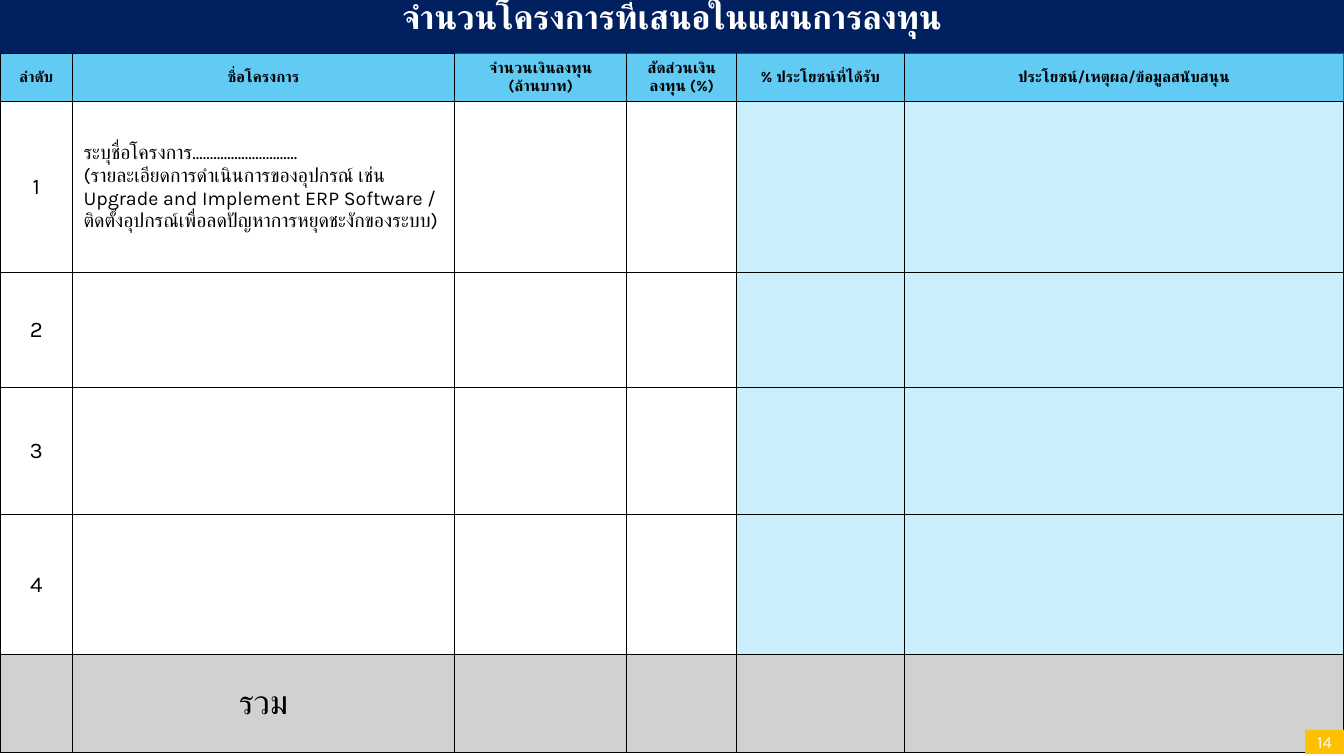
from dataclasses import dataclass

import lxml.etree
import pptx
import pptx.dml.color
import pptx.enum.shapes
import pptx.enum.text
import pptx.oxml.ns
import pptx.util

COLORS = {
    "black": "000000",
    "white": "FFFFFF",
    "navy": "002060",
    "edge": "007BC0",
    "heading": "61CBF4",
    "benefit": "CAEEFB",
    "total": "D1D1D1",
    "badge": "FFC000",
}
FONT = "Karla"
TABLE_TOP = 38.2
HEADING_HEIGHT = 33.8
CENTER = pptx.enum.text.PP_ALIGN.CENTER
LEFT = pptx.enum.text.PP_ALIGN.LEFT
TOP = pptx.enum.text.MSO_ANCHOR.TOP
MIDDLE = pptx.enum.text.MSO_ANCHOR.MIDDLE


@dataclass
class Text:
    paragraphs: list[list[str]]
    size: float
    bold: bool = False
    color: str = "black"
    align: pptx.enum.text.PP_ALIGN = CENTER
    spacing: float = 1.0


@dataclass
class Column:
    width: float
    heading: list[str]
    fill: str = "white"
    top_edge: str = "edge"
    right_edge: str = "black"


@dataclass
class Row:
    height: float
    texts: dict[int, Text]
    fill: str | None = None


@dataclass
class Bar:
    left: float
    top: float
    width: float
    height: float
    fill: str
    text: Text
    inset: float
    anchor: pptx.enum.text.MSO_ANCHOR
    wrap: bool


COLUMNS = [
    Column(51.8, ["ลำดับ"], top_edge="black"),
    Column(272.9, ["ชื่อโครงการ"], top_edge="black"),
    Column(123.1, ["จำนวนเงินลงทุน", "(ล้านบาท)"]),
    Column(78.5, ["สัดส่วนเงินลงทุน (%)"]),
    Column(119.5, ["% ประโยชน์ที่ได้รับ"], "benefit"),
    Column(314.2, ["ประโยชน์/เหตุผล/ข้อมูลสนับสนุน"], "benefit", right_edge="edge"),
]
PROJECT = Text(
    [[
        "ระบุชื่อโครงการ..............................",
        "(รายละเอียดการดำเนินการของอุปกรณ์ เช่น Upgrade and Implement ERP Software / "
        "ติดตั้งอุปกรณ์เพื่อลดปัญหาการหยุดชะงักของระบบ)",
    ]],
    14,
    align=LEFT,
)
ROWS = [
    Row(height, {0: Text([[str(number)]], 16)})
    for number, height in enumerate([122.4, 82.1, 90.7, 100.1], 1)
]
ROWS[0].texts[1] = PROJECT
ROWS.append(Row(69.8, {1: Text([["รวม"]], 24)}, "total"))
BARS = [
    Bar(0, 0, 960, 38.2, "navy",
        Text([["จำนวนโครงการที่เสนอในแผนการลงทุน"]], 24, True, "white", spacing=0.9),
        0, TOP, True),
    Bar(932.2, 521.3, 27.8, 17.3, "badge",
        Text([["14"]], 12, color="white"), 7.2, MIDDLE, False),
]


def rgb(name: str) -> pptx.dml.color.RGBColor:
    return pptx.dml.color.RGBColor.from_string(COLORS[name])


def write_text(frame: pptx.text.text.TextFrame, text: Text) -> None:
    for index, lines in enumerate(text.paragraphs):
        paragraph = frame.paragraphs[0] if index == 0 else frame.add_paragraph()
        paragraph.alignment = text.align
        paragraph.line_spacing = text.spacing
        for line_index, line in enumerate(lines):
            if line_index:
                paragraph.add_line_break()
            run = paragraph.add_run()
            run.text = line
            run.font.name = FONT
            run.font.size = pptx.util.Pt(text.size)
            run.font.bold = text.bold
            run.font.color.rgb = rgb(text.color)
            complex_font = lxml.etree.SubElement(
                run.font._element, pptx.oxml.ns.qn("a:cs"))
            complex_font.set("typeface", FONT)


def style_cell(cell: pptx.table._Cell, fill: str, top: str = "black",
               right: str = "black") -> None:
    cell.margin_left = cell.margin_right = pptx.util.Pt(7.9)
    cell.margin_top = cell.margin_bottom = pptx.util.Pt(4.3)
    cell.vertical_anchor = MIDDLE
    properties = cell._tc.get_or_add_tcPr()
    for side, color in {"L": "black", "R": right, "T": top, "B": "black"}.items():
        line = lxml.etree.SubElement(properties, pptx.oxml.ns.qn(f"a:ln{side}"))
        line.set("w", str(pptx.util.Pt(0.75)))
        solid = lxml.etree.SubElement(line, pptx.oxml.ns.qn("a:solidFill"))
        lxml.etree.SubElement(
            solid, pptx.oxml.ns.qn("a:srgbClr")).set("val", COLORS[color])
    cell.fill.solid()
    cell.fill.fore_color.rgb = rgb(fill)


def add_project_table(slide: pptx.slide.Slide) -> None:
    heights = [HEADING_HEIGHT] + [row.height for row in ROWS]
    table = slide.shapes.add_table(
        len(heights), len(COLUMNS), 0, pptx.util.Pt(TABLE_TOP),
        pptx.util.Pt(sum(column.width for column in COLUMNS)),
        pptx.util.Pt(sum(heights))).table
    table.first_row = table.horz_banding = False
    for table_row, height in zip(table.rows, heights):
        table_row.height = pptx.util.Pt(height)
    for index, column in enumerate(COLUMNS):
        table.columns[index].width = pptx.util.Pt(column.width)
        heading = table.cell(0, index)
        style_cell(heading, "heading", column.top_edge, column.right_edge)
        write_text(heading.text_frame,
                   Text([[line] for line in column.heading], 11, True))
        for row_index, row in enumerate(ROWS, 1):
            cell = table.cell(row_index, index)
            style_cell(cell, row.fill or column.fill)
            if index in row.texts:
                write_text(cell.text_frame, row.texts[index])


def add_bar(slide: pptx.slide.Slide, bar: Bar) -> None:
    shape = slide.shapes.add_shape(
        pptx.enum.shapes.MSO_SHAPE.RECTANGLE,
        pptx.util.Pt(bar.left), pptx.util.Pt(bar.top),
        pptx.util.Pt(bar.width), pptx.util.Pt(bar.height))
    shape.shadow.inherit = False
    shape.fill.solid()
    shape.fill.fore_color.rgb = rgb(bar.fill)
    shape.line.fill.background()
    frame = shape.text_frame
    frame.margin_left = frame.margin_right = pptx.util.Pt(bar.inset)
    frame.margin_top = frame.margin_bottom = pptx.util.Pt(bar.inset)
    frame.vertical_anchor = bar.anchor
    frame.word_wrap = bar.wrap
    write_text(frame, bar.text)


def main() -> None:
    presentation = pptx.Presentation()
    presentation.slide_width = pptx.util.Pt(960)
    presentation.slide_height = pptx.util.Pt(540)
    slide = presentation.slides.add_slide(presentation.slide_layouts[6])
    add_project_table(slide)
    for bar in BARS:
        add_bar(slide, bar)
    presentation.save("out.pptx")


if __name__ == "__main__":
    main()
